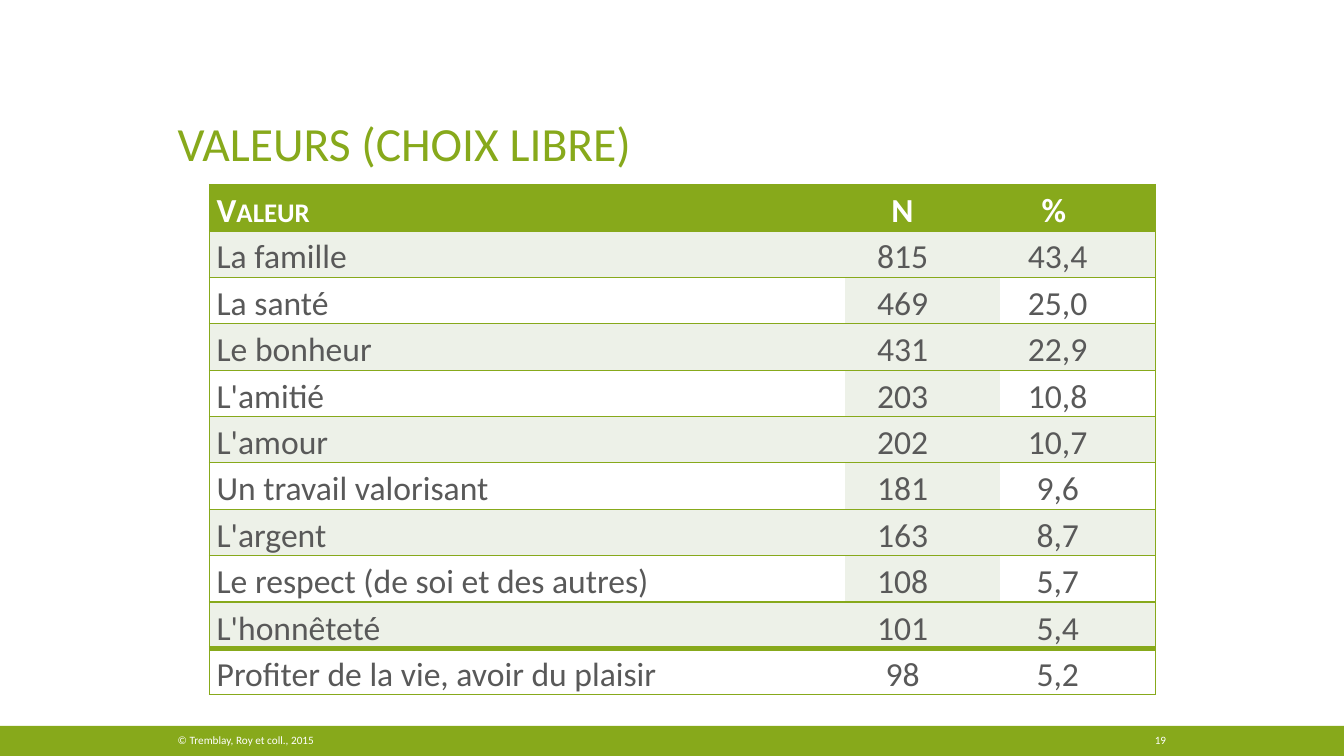
from lxml import etree
from pptx import Presentation
from pptx.dml.color import RGBColor
from pptx.enum import shapes, text
from pptx.oxml import ns
from pptx.util import Cm, Pt

GREEN = RGBColor(0x87, 0xA9, 0x1B)
PALE = RGBColor(0xED, 0xF1, 0xE8)
WHITE = RGBColor(0xFF, 0xFF, 0xFF)
GREY = RGBColor(0x59, 0x59, 0x59)
FONT = "Calibri"
ALIGN = text.PP_ALIGN
ANCHOR = text.MSO_ANCHOR

ROWS = [
    ("Valeur", "N", "% "),
    ("La famille", "815", "43,4"),
    ("La santé", "469", "25,0"),
    ("Le bonheur", "431", "22,9"),
    ("L'amitié", "203", "10,8"),
    ("L'amour", "202", "10,7"),
    ("Un travail valorisant", "181", "9,6"),
    ("L'argent", "163", "8,7"),
    ("Le respect (de soi et des autres)", "108", "5,7"),
    ("L'honnêteté", "101", "5,4"),
    ("Profiter de la vie, avoir du plaisir", "98", "5,2"),
]


def style(para, size, color, align, space, bold=False):
    """Format a paragraph and its runs."""
    para.alignment = align
    para.line_spacing = space
    for run in para.runs:
        font = run.font
        font.name, font.size, font.bold = FONT, Pt(size), bold
        font.color.rgb = color


def add_text(slide, words, box, size, color, anchor, align=ALIGN.LEFT, space=1.0):
    """Add a wrapped text box."""
    frame = slide.shapes.add_textbox(*map(Cm, box)).text_frame
    frame.word_wrap = True
    frame.vertical_anchor = anchor
    frame.text = words
    style(frame.paragraphs[0], size, color, align, space)


def add_band(slide):
    """Add the green band at the foot."""
    band = slide.shapes.add_shape(
        shapes.MSO_SHAPE.RECTANGLE, 0, Cm(18.29), Cm(33.87), Cm(0.76))
    band.shadow.inherit = False
    band.fill.solid()
    band.fill.fore_color.rgb = GREEN
    band.line.fill.background()


def set_edge(cell, side, width):
    """Draw one cell border in green, or none for a zero width."""
    props = cell._tc.get_or_add_tcPr()
    line = etree.SubElement(props, ns.qn("a:ln" + side), w=str(Pt(width)))
    if width:
        fill = etree.SubElement(line, ns.qn("a:solidFill"))
        etree.SubElement(fill, ns.qn("a:srgbClr"), val=str(GREEN))
    else:
        etree.SubElement(line, ns.qn("a:noFill"))


def fill_cell(cell, words, row, col):
    """Write and format one cell by its place in the table."""
    head, last = row == 0, len(ROWS) - 1
    cell.text = words
    cell.margin_left = Cm(0.1 if head and col else 0.18)
    cell.margin_right = cell.margin_left + Cm(1 if col else 0)
    cell.margin_top = cell.margin_bottom = 0
    para = cell.text_frame.paragraphs[0]
    align = ALIGN.CENTER if col else ALIGN.LEFT
    style(para, 24, WHITE if head else GREY, align, 1.15, head)
    if head and col == 0:
        para.runs[0].font._element.set("cap", "small")
    set_edge(cell, "L", 1 if col == 0 else 0)
    set_edge(cell, "R", 1 if col == 2 else 0)
    set_edge(cell, "T", 4 if row == last else 1)
    set_edge(cell, "B", 4 if row == last - 1 else 1)
    shaded = row % 2 or (col == 1 and row < last)
    cell.fill.solid()
    cell.fill.fore_color.rgb = GREEN if head else PALE if shaded else WHITE


def add_grid(slide):
    """Add the table of values."""
    high = Cm(1.12)
    grid = slide.shapes.add_table(
        len(ROWS), 3, Cm(5.28), Cm(4.65), Cm(23.83), high * len(ROWS)).table
    for col, wide in zip(grid.columns, (16.01, 3.91, 3.91)):
        col.width = Cm(wide)
    for r, row in enumerate(ROWS):
        grid.rows[r].height = high
        for c, words in enumerate(row):
            fill_cell(grid.cell(r, c), words, r, c)


def main():
    """Build the slide and save it."""
    deck = Presentation()
    deck.slide_width, deck.slide_height = Cm(33.87), Cm(19.05)
    slide = deck.slides.add_slide(deck.slide_layouts[6])
    add_band(slide)
    add_text(slide, "VALEURS (CHOIX LIBRE)", (4.23, 1.27, 25.4, 3.18),
             34, GREEN, ANCHOR.BOTTOM, space=0.9)
    add_text(slide, "© Tremblay, Roy et coll., 2015", (4.23, 18.34, 18.03, 0.64),
             8, WHITE, ANCHOR.MIDDLE)
    add_text(slide, "19", (27.48, 18.34, 2.16, 0.64),
             8, WHITE, ANCHOR.MIDDLE, ALIGN.RIGHT)
    add_grid(slide)
    deck.save("out.pptx")


if __name__ == "__main__":
    main()
